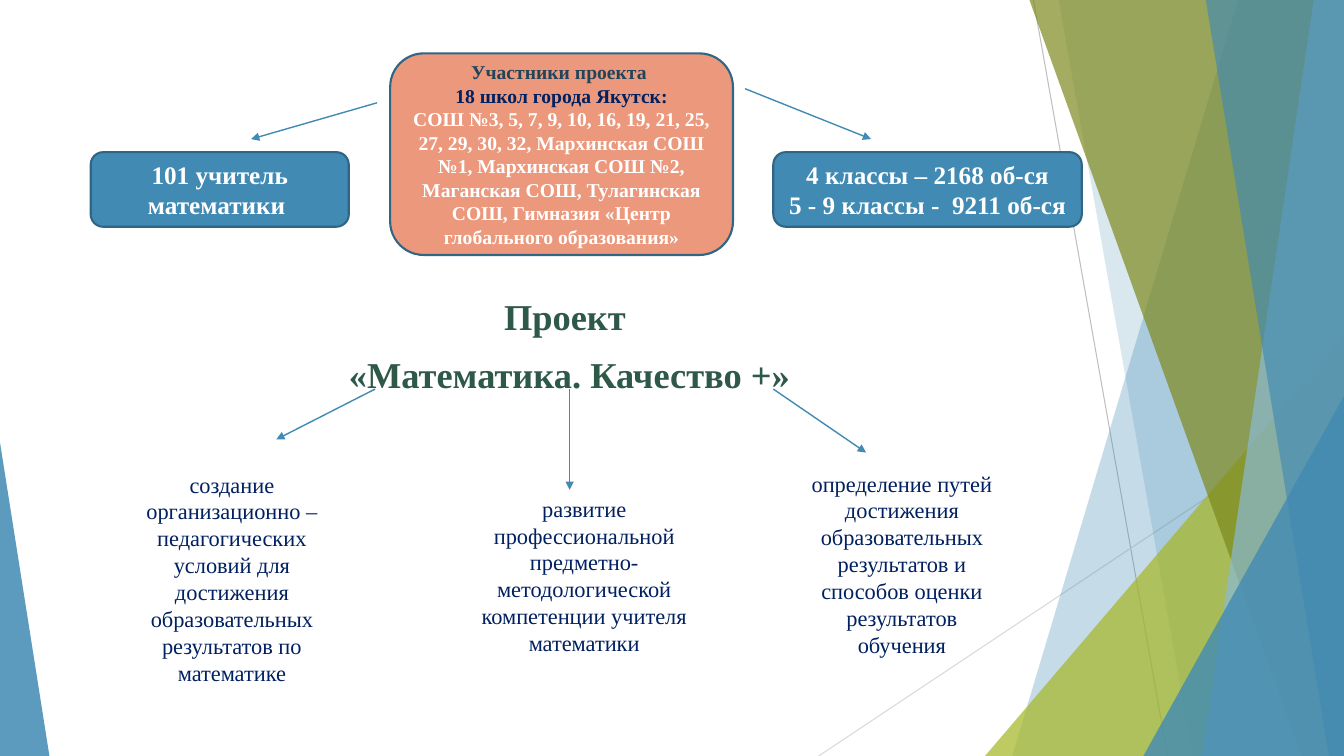
from dataclasses import dataclass
from lxml import etree
from pptx import Presentation
from pptx.dml.color import RGBColor
from pptx.enum.shapes import MSO_CONNECTOR, MSO_SHAPE
from pptx.enum.text import MSO_ANCHOR, MSO_AUTO_SIZE, PP_ALIGN
from pptx.oxml.ns import qn
from pptx.util import Inches, Pt


@dataclass(frozen=True)
class Theme:
    font: str = "Times New Roman"
    blue: str = "418AB3"
    sky: str = "8ABAD4"
    edge: str = "306684"
    lime: str = "A6B727"
    olive: str = "7D891D"
    coral: str = "EC987D"
    navy: str = "002060"
    slate: str = "20455A"
    green: str = "2E5848"
    white: str = "FFFFFF"
    gray: str = "BFBFBF"
    pale: str = "D9D9D9"
    title: int = 26
    label: int = 18
    body: int = 16
    small: int = 14


class Board:
    """Draws styled elements on one slide; all lengths are in inches."""

    def __init__(self, slide, theme):
        self.shapes = slide.shapes
        self.theme = theme

    def paint(self, shape, color, alpha=100):
        """Fill with a colour at the given opacity percentage, without a shadow."""
        shape.shadow.inherit = False
        shape.fill.solid()
        shape.fill.fore_color.rgb = RGBColor.from_string(color)
        if alpha < 100:
            tint = shape._element.spPr.find(qn("a:solidFill")).find(qn("a:srgbClr"))
            etree.SubElement(tint, qn("a:alpha"), val=str(alpha * 1000))

    def band(self, points, color, alpha):
        start, *rest = [(Inches(x), Inches(y)) for x, y in points]
        pen = self.shapes.build_freeform(*start, scale=1.0)
        pen.add_line_segments(rest, close=True)
        shape = pen.convert_to_shape()
        self.paint(shape, color, alpha)
        shape.line.fill.background()

    def wedge(self, area, apex, color, alpha):
        """Triangle whose apex sits at the given fraction of its width."""
        shape = self.shapes.add_shape(MSO_SHAPE.ISOSCELES_TRIANGLE, *map(Inches, area))
        shape.adjustments[0] = apex
        self.paint(shape, color, alpha)
        shape.line.fill.background()

    def line(self, ends, color, width):
        link = self.shapes.add_connector(MSO_CONNECTOR.STRAIGHT, *map(Inches, ends))
        link.line.color.rgb = RGBColor.from_string(color)
        link.line.width = Pt(width)
        etree.SubElement(link._element.spPr, qn("a:effectLst"))
        return link

    def arrow(self, ends):
        link = self.line(ends, self.theme.blue, 1)
        stroke = link._element.spPr.find(qn("a:ln"))
        etree.SubElement(stroke, qn("a:tailEnd"), type="triangle")

    def set_text(self, frame, lines, size, colors, bold=False, gap=0):
        """Put one centred paragraph per line, each in its own colour."""
        frame.word_wrap = True
        frame.text = "\n".join(lines)
        for i, (para, color) in enumerate(zip(frame.paragraphs, colors)):
            para.alignment = PP_ALIGN.CENTER
            if i and gap:
                para.space_before = Pt(gap)
            for run in para.runs:
                run.font.name = self.theme.font
                run.font.size = Pt(size)
                run.font.bold = bold
                run.font.color.rgb = RGBColor.from_string(color)

    def text(self, area, lines, size, color, bold=False, gap=0):
        frame = self.shapes.add_textbox(*map(Inches, area)).text_frame
        self.set_text(frame, lines, size, [color] * len(lines), bold, gap)
        return frame

    def goal(self, area, words):
        frame = self.text(area, [words], self.theme.body, self.theme.navy)
        frame.auto_size = MSO_AUTO_SIZE.SHAPE_TO_FIT_TEXT

    def card(self, area, lines, fill, size, colors):
        shape = self.shapes.add_shape(MSO_SHAPE.ROUNDED_RECTANGLE, *map(Inches, area))
        self.paint(shape, fill)
        shape.line.color.rgb = RGBColor.from_string(self.theme.edge)
        shape.line.width = Pt(1.5)
        shape.text_frame.vertical_anchor = MSO_ANCHOR.MIDDLE
        self.set_text(shape.text_frame, lines, size, colors, bold=True)


WIDE, HIGH = 13.33, 7.5


def decor(board):
    """Slanted bands and wedges along the slide's edges."""
    t = board.theme

    def strip(top, foot, color, alpha):
        board.band([(top, 0), (WIDE, 0), (WIDE, HIGH), (foot, HIGH)], color, alpha)

    board.line((10.25, 0, 11.58, HIGH), t.gray, 0.75)
    board.line((WIDE, 4.03, 8.12, HIGH), t.pale, 0.75)
    strip(12.28, 10.04, t.blue, 30)
    strip(10.5, 11.83, t.blue, 20)
    board.wedge((9.77, 3.33, 3.56, 4.17), 1, t.lime, 72)
    strip(10.21, 12.91, t.olive, 70)
    strip(13.03, 11.92, t.sky, 70)
    strip(11.96, 13.18, t.blue, 65)
    board.wedge((11.34, 3.93, 1.99, 3.57), 1, t.blue, 80)
    board.wedge((0, 4.39, 0.49, 3.11), 0, t.blue, 85)


def main():
    deck = Presentation()
    deck.slide_width, deck.slide_height = Inches(WIDE), Inches(HIGH)
    t = Theme()
    board = Board(deck.slides.add_slide(deck.slide_layouts[6]), t)
    decor(board)

    board.text((3.03, 2.87, 5.24, 0.99), ["Проект ", "«Математика. Качество +»"],
               t.title, t.green, bold=True, gap=10)

    goals = [
        ((1.09, 4.62, 2.42, 2.26), "создание организационно – педагогических условий "
         "для достижения образовательных результатов по математике"),
        ((4.56, 4.86, 2.47, 1.72), "развитие профессиональной "
         "предметно-методологической компетенции учителя математики"),
        ((7.87, 4.61, 2.15, 1.99), "определение путей достижения образовательных "
         "результатов и способов оценки результатов обучения"),
    ]
    for area, words in goals:
        board.goal(area, words)

    board.card((3.87, 0.53, 3.4, 2), [
        "Участники проекта ",
        "18 школ города Якутск:",
        "СОШ №3, 5, 7, 9, 10, 16, 19, 21, 25, 27, 29, 30, 32, Мархинская СОШ №1, "
        "Мархинская СОШ №2, Маганская СОШ, Тулагинская СОШ, "
        "Гимназия «Центр глобального образования»",
    ], t.coral, t.small, [t.slate, t.navy, t.white])
    for left, width, lines in [
        (0.9, 2.56, ["101 учитель математики "]),
        (7.67, 3.06, ["4 классы – 2168 об-ся", "5 - 9 классы -  9211 об-ся"]),
    ]:
        board.card((left, 1.51, width, 0.74), lines, t.blue, t.label, [t.white] * 2)

    for ends in [
        (5.65, 3.86, 5.65, 4.86),
        (3.72, 3.86, 2.74, 4.36),
        (7.67, 3.86, 8.59, 4.49),
        (3.74, 1.02, 2.49, 1.38),
        (7.39, 0.88, 8.64, 1.38),
    ]:
        board.arrow(ends)

    deck.save("out.pptx")


if __name__ == "__main__":
    main()
